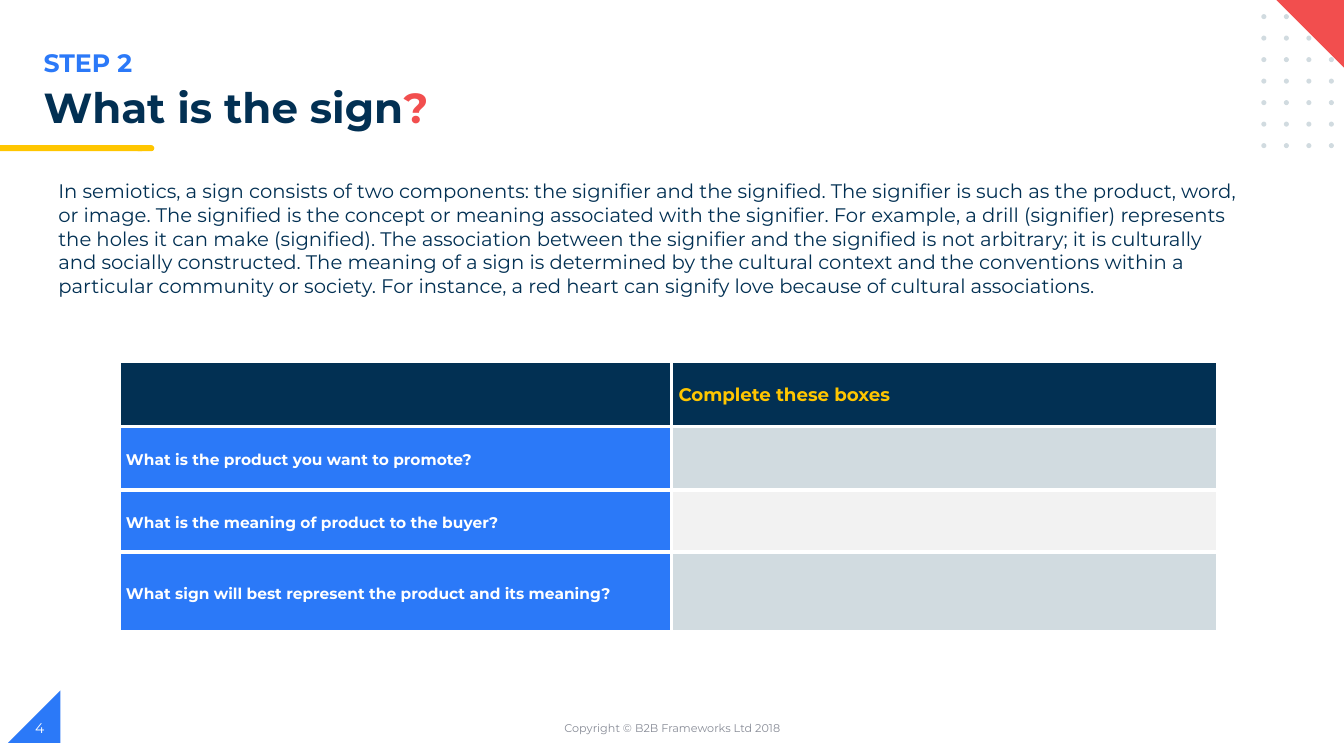
from pptx import Presentation
from pptx import util as u
from pptx.dml.color import RGBColor
from pptx.enum import shapes, text
from pptx.oxml import parse_xml
from pptx.oxml.ns import nsdecls

NAVY = RGBColor(0x02, 0x30, 0x53)
BLUE = RGBColor(0x2B, 0x79, 0xF8)
GOLD = RGBColor(0xFF, 0xC6, 0x00)
RED = RGBColor(0xF2, 0x4E, 0x4E)
MIST = RGBColor(0xD1, 0xDB, 0xE0)
PALE = RGBColor(0xF2, 0xF2, 0xF2)
GREY = RGBColor(0x88, 0x8C, 0x97)
WHITE = RGBColor(0xFF, 0xFF, 0xFF)

FORM = shapes.MSO_SHAPE
MID = text.MSO_ANCHOR.MIDDLE
TOP = text.MSO_ANCHOR.TOP
MID_X = text.PP_ALIGN.CENTER

BODY = (
    "In semiotics, a sign consists of two components: the signifier and the signified. "
    "The signifier is such as the product, word, or image. The signified is the concept or "
    "meaning associated with the signifier. For example, a drill (signifier) represents the "
    "holes it can make (signified). The association between the signifier and the signified "
    "is not arbitrary; it is culturally and socially constructed. The meaning of a sign is "
    "determined by the cultural context and the conventions within a particular community or "
    "society. For instance, a red heart can signify love because of cultural associations."
)
ASKS = [
    ("", "Complete these boxes", NAVY, NAVY, 7.8),
    ("What is the product you want to promote?", "", BLUE, MIST, 7.56),
    ("What is the meaning of product to the buyer?", "", BLUE, PALE, 7.44),
    ("What sign will best represent the product and its meaning?", "", BLUE, MIST, 9.48),
]


class Page:
    """Draws styled elements on one slide, placed on a grid of 160 columns by 90 rows."""

    face = "Montserrat"

    def __init__(self, deck):
        self.unit = deck.slide_height / 90
        self.slide = deck.slides.add_slide(deck.slide_layouts[6])

    def grid(self, *cells):
        return [u.Emu(round(cell * self.unit)) for cell in cells]

    def font(self, para, size, tint, bold=False):
        para.font.name = self.face
        para.font.size = u.Pt(size)
        para.font.bold = bold
        para.font.color.rgb = tint

    def shape(self, kind, box, tint, turn=0, flip=False):
        item = self.slide.shapes.add_shape(kind, *self.grid(*box))
        item.shadow.inherit = False
        item.fill.solid()
        item.fill.fore_color.rgb = tint
        item.line.fill.background()
        item.rotation = turn
        if flip:
            item._element.spPr.xfrm.set("flipH", "1")

    def text(self, box, parts, size, bold=False, anchor=TOP, align=None, lead=None):
        frame = self.slide.shapes.add_textbox(*self.grid(*box)).text_frame
        frame.word_wrap = True
        frame.vertical_anchor = anchor
        para = frame.paragraphs[0]
        para.alignment = align
        para.line_spacing = lead
        self.font(para, size, parts[0][1], bold)
        for words, tint in parts:
            run = para.add_run()
            run.text = words
            if len(parts) > 1:
                run.font.color.rgb = tint

    def cell(self, cell, words, fill, size, tint):
        props = cell._tc.get_or_add_tcPr()
        for side in "LRTB":
            props.append(parse_xml(
                f'<a:ln{side} {nsdecls("a")} w="{u.Pt(3)}"><a:solidFill>'
                f'<a:srgbClr val="{WHITE}"/></a:solidFill></a:ln{side}>'))
        cell.fill.solid()
        cell.fill.fore_color.rgb = fill
        cell.vertical_anchor = MID
        cell.margin_left = cell.margin_right = u.Inches(0.07)
        cell.margin_top = cell.margin_bottom = 0
        para = cell.text_frame.paragraphs[0]
        para.line_spacing = 1.15
        self.font(para, size, tint, True)
        if words:
            para.add_run().text = words

    def table(self, left, top, wide, rows):
        high = [row[-1] for row in rows]
        box = self.grid(left, top, sum(wide), sum(high))
        table = self.slide.shapes.add_table(len(rows), len(wide), *box).table
        for col, size in zip(table.columns, self.grid(*wide)):
            col.width = size
        for row, size in zip(table.rows, self.grid(*high)):
            row.height = size
        for y, (ask, reply, dark, light, _) in enumerate(rows):
            self.cell(table.cell(y, 0), ask, dark, 11, WHITE)
            self.cell(table.cell(y, 1), reply, light, 13, GOLD)

    def dots(self, left, top, cols, rows):
        for y in range(rows):
            for x in range(cols):
                box = (left + x * 2.68, top + y * 2.56, 0.6, 0.6)
                self.shape(FORM.OVAL, box, MIST)


def main():
    deck = Presentation()
    deck.slide_width, deck.slide_height = u.Inches(13.33), u.Inches(7.5)
    page = Page(deck)
    page.shape(FORM.RIGHT_TRIANGLE, (0.96, 82.2, 6.24, 6.24), BLUE, flip=True)
    page.shape(FORM.FLOWCHART_TERMINATOR, (16.08, 17.28, 2.28, 0.72), GOLD)
    page.shape(FORM.RECTANGLE, (0, 17.28, 16.92, 0.72), GOLD)
    page.text((4, 5, 80.28, 4.8), [("STEP 2", BLUE)], 18, bold=True)
    page.dots(150.12, 1.68, 4, 7)
    page.shape(FORM.RIGHT_TRIANGLE, (151.8, -0.12, 8.64, 8.64), RED, turn=180)
    page.text((53.04, 84.24, 54, 4.8), [("Copyright © B2B Frameworks Ltd 2018", GREY)], 8,
              anchor=MID, align=MID_X)
    page.text((3, 84.24, 36, 4.8), [("4", WHITE)], 10, anchor=MID)
    page.text((4, 9.84, 138, 6.72), [("What is the sign", NAVY), ("?", RED)], 30,
              bold=True, lead=0.9)
    page.table(14.16, 42.96, (65.76, 65.04), ASKS)
    page.text((5.76, 20.76, 142.8, 15.36), [(BODY, NAVY)], 14)
    deck.save("out.pptx")


if __name__ == "__main__":
    main()
